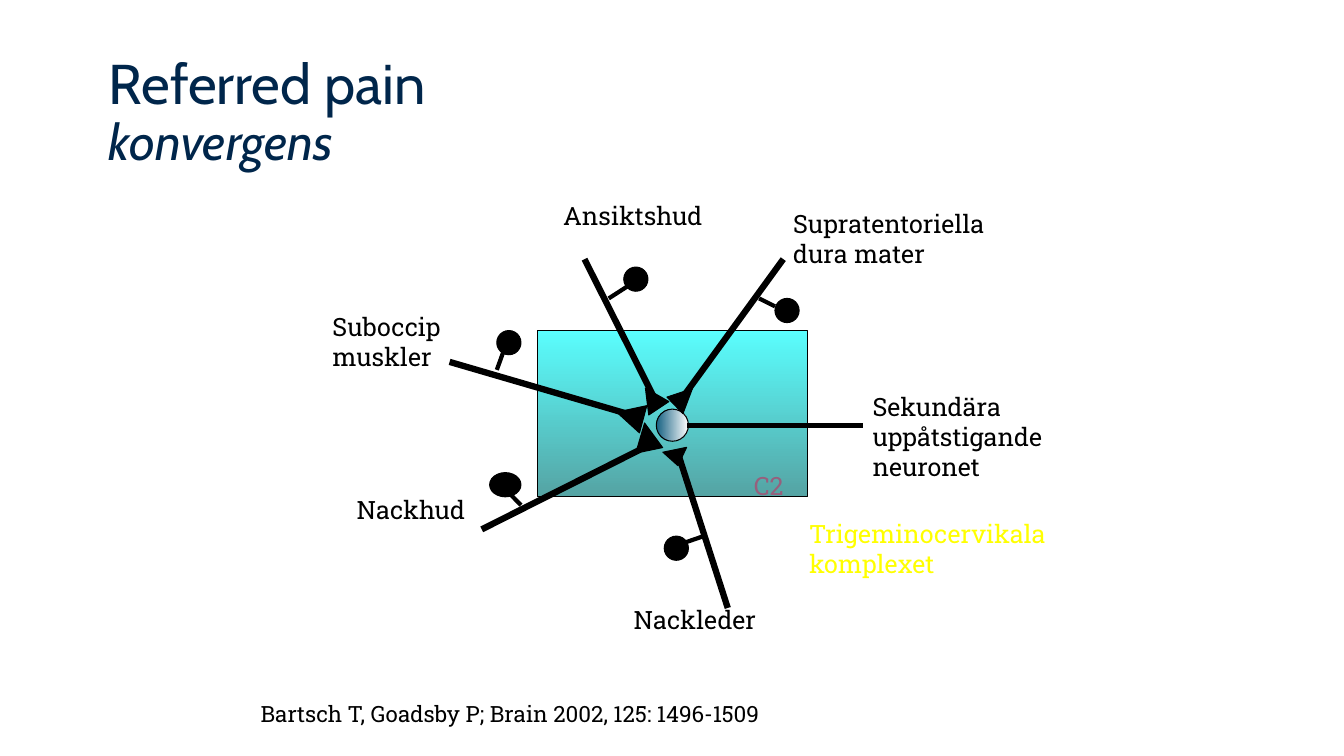
"""Builds a slide on convergence of neck and face afferents in referred pain."""
from dataclasses import dataclass

import lxml.etree
import pptx
import pptx.dml.color
import pptx.enum.shapes
import pptx.enum.text
import pptx.oxml.ns
import pptx.util

Cm = pptx.util.Cm
Pt = pptx.util.Pt
qn = pptx.oxml.ns.qn
SHAPE = pptx.enum.shapes.MSO_SHAPE

COLORS = {
    "navy": "00264B",
    "black": "000000",
    "cyan": "00FFFF",
    "teal": "007676",
    "blue": "156082",
    "white": "FFFFFF",
    "mauve": "96607D",
    "yellow": "FFFF00",
}


@dataclass
class Box:
    x: float
    y: float
    w: float = 0.61
    h: float = 0.61


@dataclass
class Line:
    x1: float
    y1: float
    x2: float
    y2: float


@dataclass
class Terminal:
    box: Box
    rotation: float
    apex: float = 0.5


@dataclass
class Afferent:
    nerve: Line
    stalk: Line
    soma: Box
    terminal: Terminal


@dataclass
class Label:
    text: str
    box: Box
    color: str = "black"
    size: int = 18


AFFERENTS = [
    Afferent(Line(17.12, 10.13, 19.74, 6.53), Line(19.13, 7.52, 19.53, 7.72),
             Box(19.53, 7.52), Terminal(Box(16.94, 9.7, 0.58), 46.2)),
    Afferent(Line(16.54, 10.13, 14.73, 6.53), Line(15.34, 7.52, 15.93, 7.14),
             Box(15.72, 6.73), Terminal(Box(16.13, 9.73), 326.3)),
    Afferent(Line(16.13, 10.52, 11.33, 9.12), Line(12.52, 9.32, 12.73, 8.74),
             Box(12.52, 8.33), Terminal(Box(15.52, 10.13, 0.71, 0.69), 285.1)),
    Afferent(Line(16.13, 11.33, 12.14, 13.34), Line(13.13, 12.73, 12.73, 12.32),
             Box(12.34, 11.91, 0.79), Terminal(Box(16.03, 10.82, 0.79), 106.3, 0.59)),
    Afferent(Line(17.12, 11.53, 18.34, 15.32), Line(17.73, 13.51, 17.12, 13.72),
             Box(16.74, 13.51), Terminal(Box(16.74, 11.33, 0.61, 0.41), 168.4)),
]

LABELS = [
    Label("C2", Box(18.75, 11.73, 1.6, 1.02), "mauve"),
    Label("Trigeminocervikala komplexet", Box(20.14, 12.93, 7.01, 1.8), "yellow"),
    Label("Sekundära uppåtstigande neuronet", Box(21.74, 9.73, 5, 2.57)),
    Label("Supratentoriella dura mater", Box(19.74, 5.13, 5.79, 1.8)),
    Label("Ansiktshud", Box(13.94, 4.93, 4.8, 1.02)),
    Label("Suboccip muskler", Box(8.13, 7.72, 4.39, 1.8)),
    Label("Nackhud", Box(8.74, 12.32, 3.99, 1.02)),
    Label("Nackleder", Box(15.72, 15.11, 5.41, 1.02)),
    Label("Bartsch T, Goadsby P; Brain 2002, 125: 1496-1509",
          Box(6.32, 17.53, 14.2, 0.94), size=16),
]


def rgb(name: str) -> pptx.dml.color.RGBColor:
    return pptx.dml.color.RGBColor.from_string(COLORS[name])


def place(box: Box) -> tuple:
    return Cm(box.x), Cm(box.y), Cm(box.w), Cm(box.h)


def style_run(r, font: str, size: int, color: str) -> None:
    r.font.name = font
    r.font.size = Pt(size)
    r.font.color.rgb = rgb(color)


def add_shape(s, kind, box: Box):
    sp = s.shapes.add_shape(kind, *place(box))
    sp.shadow.inherit = False
    sp.fill.solid()
    sp.fill.fore_color.rgb = rgb("black")
    sp.line.color.rgb = rgb("black")
    sp.line.width = Pt(0.75)
    return sp


def add_gradient(sp, colors: tuple, angle: float, alphas: tuple = ()) -> None:
    sp.fill.gradient()
    sp.fill.gradient_angle = angle
    for stop, color in zip(sp.fill.gradient_stops, colors):
        stop.color.rgb = rgb(color)
    stops = sp.element.spPr.find(qn("a:gradFill")).iter(qn("a:srgbClr"))
    for clr, alpha in zip(stops, alphas):
        lxml.etree.SubElement(clr, qn("a:alpha")).set("val", str(alpha * 1000))


def add_line(s, line: Line, width: float) -> None:
    straight = pptx.enum.shapes.MSO_CONNECTOR.STRAIGHT
    c = s.shapes.add_connector(straight, Cm(line.x1), Cm(line.y1), Cm(line.x2), Cm(line.y2))
    c.line.color.rgb = rgb("black")
    c.line.width = Pt(width)
    lxml.etree.SubElement(c.element.spPr, qn("a:effectLst"))


def add_terminal(s, terminal: Terminal) -> None:
    sp = add_shape(s, SHAPE.ISOSCELES_TRIANGLE, terminal.box)
    sp.rotation = terminal.rotation
    sp.adjustments[0] = terminal.apex


def add_label(s, label: Label) -> None:
    tf = s.shapes.add_textbox(*place(label.box)).text_frame
    tf.word_wrap = True
    tf.text = label.text
    style_run(tf.paragraphs[0].runs[0], "Roboto Slab", label.size, label.color)


def add_title(s) -> None:
    title = s.shapes.title
    title.left, title.top, title.width, title.height = place(Box(2.34, 1.02, 29.21, 3.68))
    tf = title.text_frame
    tf.text = "Referred pain\vkonvergens"
    tf.vertical_anchor = pptx.enum.text.MSO_ANCHOR.MIDDLE
    p = tf.paragraphs[0]
    p.alignment = pptx.enum.text.PP_ALIGN.LEFT
    p.line_spacing = 0.9
    p._p.get_or_add_pPr().set("marL", str(Cm(0.15)))
    for r, size in zip(p.runs, (40, 36)):
        style_run(r, "Cabin", size, "navy")
    p.runs[1].font.italic = True
    lxml.etree.SubElement(p._p.find(qn("a:br")), qn("a:rPr")).set("sz", "4000")


def main() -> None:
    prs = pptx.Presentation()
    prs.slide_width, prs.slide_height = Cm(33.87), Cm(19.05)
    s = prs.slides.add_slide(prs.slide_layouts[5])
    add_title(s)
    segment = add_shape(s, SHAPE.RECTANGLE, Box(13.54, 8.33, 6.81, 4.19))
    add_gradient(segment, ("cyan", "teal"), 270, (65, 67))
    neuron = add_shape(s, SHAPE.OVAL, Box(16.54, 10.31, 0.81, 0.81))
    add_gradient(neuron, ("blue", "white"), 0)
    add_line(s, Line(17.32, 10.72, 21.74, 10.72), 3)
    for afferent in AFFERENTS:
        add_line(s, afferent.nerve, 4.5)
        add_line(s, afferent.stalk, 3)
        add_shape(s, SHAPE.OVAL, afferent.soma)
        add_terminal(s, afferent.terminal)
    for label in LABELS:
        add_label(s, label)
    prs.save("out.pptx")


if __name__ == "__main__":
    main()
